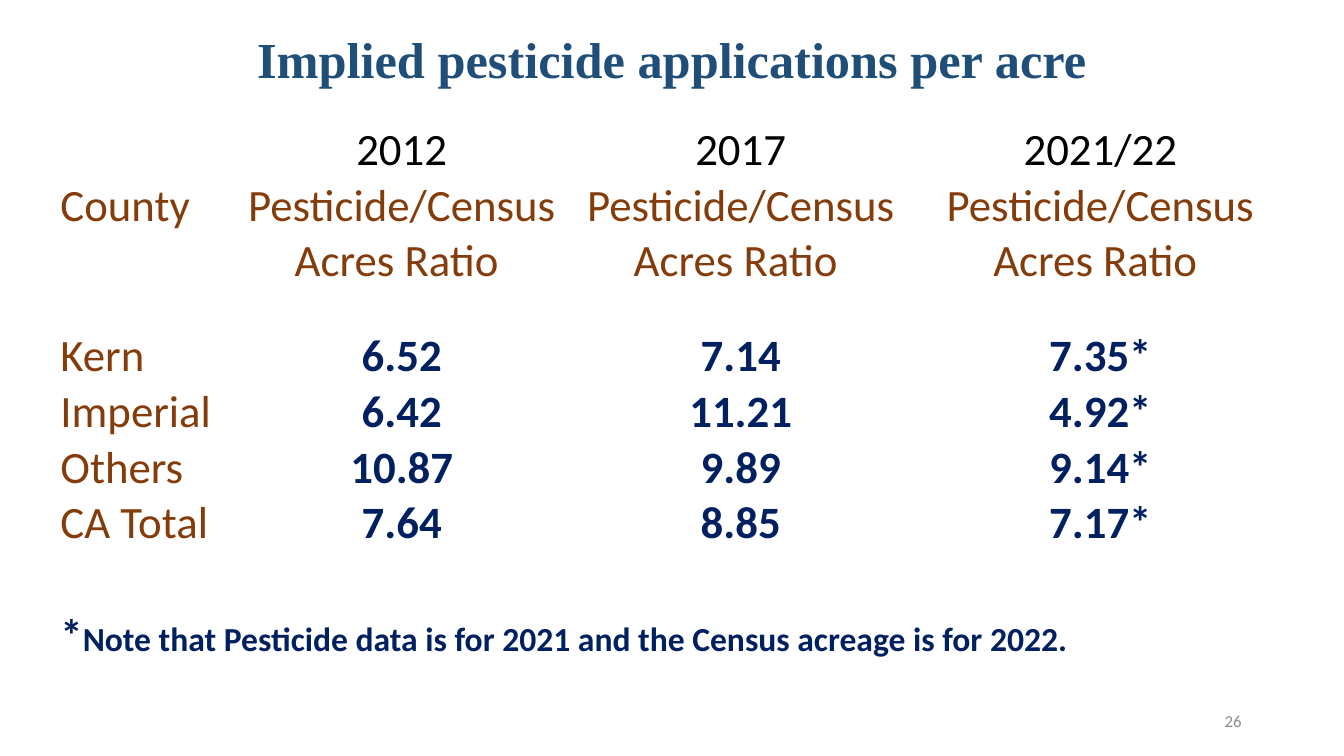
from pptx import Presentation
from pptx.dml.color import RGBColor
from pptx.enum import text
from pptx.util import Pt

TITLE = "Implied pesticide applications per acre"
RATIO = "Pesticide/Census Acres Ratio "
ROWS = [
    ("", "2012", "2017", "2021/22"),
    ("County", RATIO, RATIO, RATIO),
    ("Kern", "6.52", "7.14", "7.35*"),
    ("Imperial", "6.42", "11.21", "4.92*"),
    ("Others", "10.87", "9.89", "9.14*"),
    ("CA Total", "7.64", "8.85", "7.17*"),
]
NOTE = ("*", "Note that Pesticide data is for 2021 and the Census acreage is for 2022.")
PAGE_NUMBER = "26"

COLUMN_WIDTHS = [127.3, 234.5, 249.8, 264]
ROW_HEIGHTS = [33.1, 107.3, 36, 36, 36, 80.6, 62]
TABLE_LEFT, TABLE_TOP = 42.5, 87.1
BLACK, BROWN, NAVY, BLUE, GRAY = "000000", "843C0B", "002060", "1F4E79", "8C8C8C"


def set_font(font, size, color, bold=False, name="Calibri"):
    font.name, font.size, font.bold = name, Pt(size), bold
    font.color.rgb = RGBColor.from_string(color)


def cell_style(row, column):
    if row == 0:
        return BLACK, False
    if row == 1 or column == 0:
        return BROWN, False
    return NAVY, True


presentation = Presentation()
presentation.slide_width, presentation.slide_height = Pt(960), Pt(540)
slide = presentation.slides.add_slide(presentation.slide_layouts[5])

title = slide.shapes.title
title.left, title.top, title.width, title.height = Pt(66), Pt(28.8), Pt(828), Pt(26)
title.text_frame.text = TITLE
title.text_frame.vertical_anchor = text.MSO_ANCHOR.MIDDLE
paragraph = title.text_frame.paragraphs[0]
paragraph.alignment = text.PP_ALIGN.CENTER
set_font(paragraph.font, 36, BLUE, True, "Times New Roman")

table = slide.shapes.add_table(
    len(ROW_HEIGHTS), len(COLUMN_WIDTHS), Pt(TABLE_LEFT), Pt(TABLE_TOP),
    Pt(sum(COLUMN_WIDTHS)), Pt(sum(ROW_HEIGHTS))).table
table.horz_banding = False
for column, width in zip(table.columns, COLUMN_WIDTHS):
    column.width = Pt(width)
for row, height in zip(table.rows, ROW_HEIGHTS):
    row.height = Pt(height)
for cell in table.iter_cells():
    cell.fill.background()
    cell.margin_left = cell.margin_right = cell.margin_top = Pt(0.7)
    cell.margin_bottom = 0

for r, values in enumerate(ROWS):
    for c, value in enumerate(values):
        cell = table.cell(r, c)
        cell.text = value
        paragraph = cell.text_frame.paragraphs[0]
        paragraph.alignment = text.PP_ALIGN.CENTER if c else text.PP_ALIGN.LEFT
        color, bold = cell_style(r, c)
        set_font(paragraph.font, 32, color, bold)

note_row = len(ROWS)
note = table.cell(note_row, 0)
note.merge(table.cell(note_row, len(COLUMN_WIDTHS) - 1))
for words, size in zip(NOTE, (32, 24)):
    run = note.text_frame.paragraphs[0].add_run()
    run.text = words
    set_font(run.font, size, NAVY, True)

number = slide.shapes.add_textbox(Pt(678), Pt(500.5), Pt(216), Pt(28.8))
number.text_frame.word_wrap = True
number.text_frame.vertical_anchor = text.MSO_ANCHOR.MIDDLE
number.text_frame.text = PAGE_NUMBER
paragraph = number.text_frame.paragraphs[0]
paragraph.alignment = text.PP_ALIGN.RIGHT
set_font(paragraph.font, 12, GRAY)

presentation.save("out.pptx")
